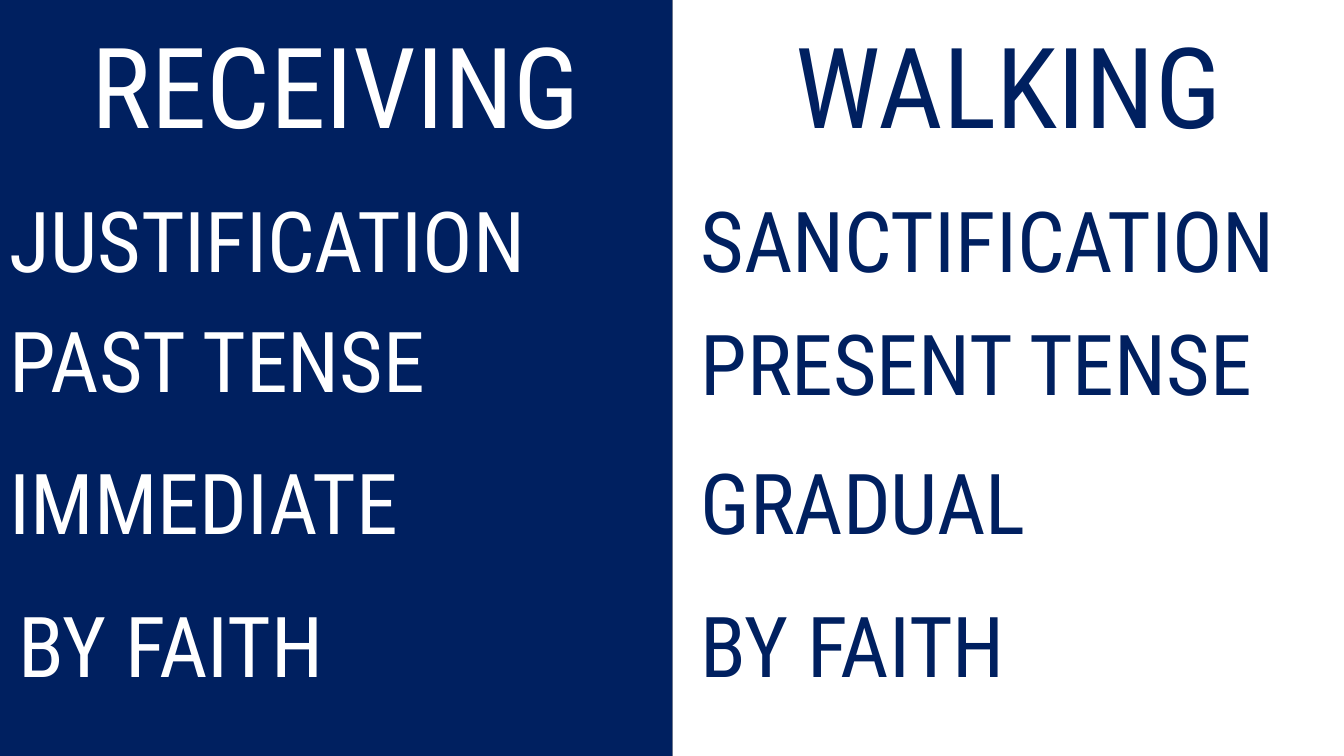
from dataclasses import dataclass

from pptx import Presentation
from pptx.dml import color
from pptx.enum import shapes, text
from pptx.slide import Slide
from pptx.util import Inches, Pt


@dataclass(frozen=True)
class Theme:
    navy: str = "002060"
    white: str = "FFFFFF"
    black: str = "000000"
    font: str = "Roboto Condensed"
    heading_size: int = 80
    point_size: int = 60


@dataclass(frozen=True)
class Point:
    wording: str
    left: float
    top: float


@dataclass(frozen=True)
class Half:
    left: float
    fill: str
    ink: str
    heading: str
    points: tuple[Point, ...]


THEME = Theme()
SLIDE_WIDTH, SLIDE_HEIGHT = 13.33, 7.5
HALF_WIDTH = 6.67
HEADING_INSET, HEADING_TOP, HEADING_WIDTH, HEADING_HEIGHT = 0.18, 0.11, 6.31, 1.45
POINT_HEIGHT = 1.11
WALKING_LEFT = 6.85

WALKING = Half(HALF_WIDTH, THEME.white, THEME.navy, "WALKING", (
    Point("SANCTIFICATION", WALKING_LEFT, 1.82),
    Point("PRESENT TENSE", WALKING_LEFT, 3.04),
    Point("GRADUAL", WALKING_LEFT, 4.42),
    Point("BY FAITH", WALKING_LEFT, 5.84),
))
RECEIVING = Half(0, THEME.navy, THEME.white, "RECEIVING", (
    Point("JUSTIFICATION", 0, 1.82),
    Point("PAST TENSE", 0, 3.01),
    Point("IMMEDIATE", 0, 4.42),
    Point("BY FAITH", 0.09, 5.84),
))


def draw_panel(slide: Slide, half: Half) -> None:
    panel = slide.shapes.add_shape(
        shapes.MSO_SHAPE.RECTANGLE,
        Inches(half.left), Inches(0), Inches(HALF_WIDTH), Inches(SLIDE_HEIGHT),
    )
    panel.shadow.inherit = False
    panel.fill.solid()
    panel.fill.fore_color.rgb = color.RGBColor.from_string(half.fill)
    panel.line.fill.background()


def draw_wording(slide: Slide, wording: str, left: float, top: float, width: float,
                 height: float, size: int, ink: str, align: text.PP_ALIGN) -> None:
    box = slide.shapes.add_textbox(Inches(left), Inches(top), Inches(width), Inches(height))
    frame = box.text_frame
    frame.word_wrap = True
    frame.auto_size = text.MSO_AUTO_SIZE.SHAPE_TO_FIT_TEXT
    paragraph = frame.paragraphs[0]
    paragraph.alignment = align
    run = paragraph.add_run()
    run.text = wording
    run.font.name = THEME.font
    run.font.size = Pt(size)
    run.font.color.rgb = color.RGBColor.from_string(ink)


def draw_half(slide: Slide, half: Half) -> None:
    draw_panel(slide, half)
    draw_wording(slide, half.heading, half.left + HEADING_INSET, HEADING_TOP, HEADING_WIDTH,
                 HEADING_HEIGHT, THEME.heading_size, half.ink, text.PP_ALIGN.CENTER)
    for point in half.points:
        draw_wording(slide, point.wording, point.left, point.top, HALF_WIDTH,
                     POINT_HEIGHT, THEME.point_size, half.ink, text.PP_ALIGN.LEFT)


def main() -> None:
    deck = Presentation()
    deck.slide_width, deck.slide_height = Inches(SLIDE_WIDTH), Inches(SLIDE_HEIGHT)
    slide = deck.slides.add_slide(deck.slide_layouts[6])
    slide.background.fill.solid()
    slide.background.fill.fore_color.rgb = color.RGBColor.from_string(THEME.black)
    for half in (WALKING, RECEIVING):
        draw_half(slide, half)
    deck.save("out.pptx")


if __name__ == "__main__":
    main()
